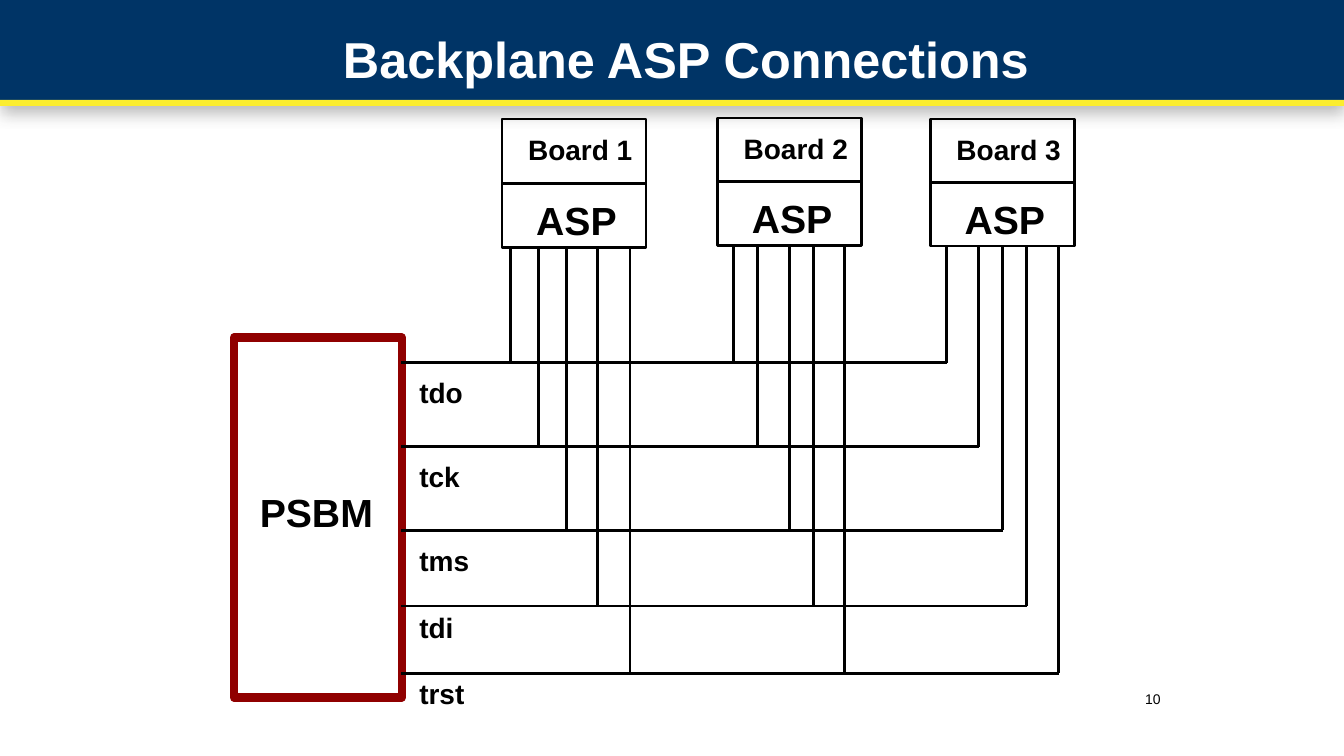
import pptx
import pptx.dml.color
import pptx.enum.shapes
import pptx.enum.text
import pptx.oxml
import pptx.oxml.ns
import pptx.util

Pt = pptx.util.Pt
ALIGN = pptx.enum.text.PP_ALIGN
colour = pptx.dml.color.RGBColor.from_string

presentation = pptx.Presentation()
presentation.slide_width = Pt(960)
presentation.slide_height = Pt(540)
slide = presentation.slides.add_slide(presentation.slide_layouts[5])


def add_box(left, top, width, height, fill=None, line=None, weight=2):
    box = slide.shapes.add_shape(
        pptx.enum.shapes.MSO_SHAPE.RECTANGLE, Pt(left), Pt(top), Pt(width), Pt(height))
    box.shadow.inherit = False
    if fill:
        box.fill.solid()
        box.fill.fore_color.rgb = colour(fill)
    else:
        box.fill.background()
    if line:
        box.line.color.rgb = colour(line)
        box.line.width = Pt(weight)
    else:
        box.line.fill.background()
    return box


def add_text(left, top, width, height, text, size, bold=True, align=ALIGN.LEFT,
             hue="000000", holder=None):
    """Write one run into the given placeholder, or into a new text box."""
    area = holder or slide.shapes.add_textbox(0, 0, 0, 0)
    area.left, area.top, area.width, area.height = Pt(left), Pt(top), Pt(width), Pt(height)
    area.text_frame.word_wrap = True
    paragraph = area.text_frame.paragraphs[0]
    paragraph.alignment = align
    run = paragraph.add_run()
    run.text = text
    run.font.name = "Arial"
    run.font.size = Pt(size)
    run.font.bold = bold
    run.font.color.rgb = colour(hue)


# Header band with its soft shadow, yellow rule and title
band = add_box(0, 0, 960, 72, fill="003466")
band_effects = band.element.spPr.find(pptx.oxml.ns.qn("a:effectLst"))
band_effects.append(pptx.oxml.parse_xml(
    f'<a:outerShdw {pptx.oxml.ns.nsdecls("a")} blurRad="{Pt(12)}" dist="{Pt(8)}" '
    'dir="5400000" algn="t" rotWithShape="0">'
    '<a:srgbClr val="A6A6A6"><a:alpha val="78000"/></a:srgbClr></a:outerShdw>'))
rule = add_box(0, 71.3, 960, 4.3, fill="FBED30")
title = slide.shapes.title
rule.element.addnext(title.element)
title.text_frame.vertical_anchor = pptx.enum.text.MSO_ANCHOR.MIDDLE
add_text(20, 8, 940, 67.7, "Backplane ASP Connections", 36,
         align=ALIGN.CENTER, hue="FFFFFF", holder=title)
add_text(668, 489.6, 168, 37.4, "10", 10, bold=False, align=ALIGN.RIGHT)

# Bus master
add_box(167, 241.2, 120.2, 257, line="900000", weight=6)
add_text(178.5, 345, 97, 41, "PSBM", 28)

# Signal: name, bus height, label top
signals = [
    ("tdo", 259.2, 265),
    ("tck", 319, 324.7),
    ("tms", 378.8, 384.5),
    ("tdi", 432.8, 432.8),
    ("trst", 481, 479.5),
]
# Board: left, top, cell height, tap position for each signal
boards = [
    (358.6, 85, 46, [364.7, 384.5, 404.6, 427, 450]),
    (512.6, 84.3, 45.4, [524, 541, 563.8, 581, 603.4]),
    (664.6, 85, 45.4, [676.2, 699.2, 716.2, 733.5, 756.2]),
]

wires = []
for number, (left, top, cell, taps) in enumerate(boards, start=1):
    for row in range(2):
        add_box(left, top + row * cell, 102.8, cell, line="000000")
    add_text(left + 11.5, top + 5.8, 98, 31.5, f"Board {number}", 20)
    add_text(left + 17.3, top + cell + 5.8, 76, 41, "ASP", 28)
    for tap, (_, bus, _) in zip(taps, signals):
        wires.append((tap, top + 2 * cell, tap, bus))

last_taps = boards[-1][-1]
for (name, bus, label_top), bus_end in zip(signals, last_taps):
    wires.append((286.8, bus, bus_end, bus))
    add_text(292.4, label_top, 54, 31.5, name, 20)

for ends in wires:
    wire = slide.shapes.add_connector(
        pptx.enum.shapes.MSO_CONNECTOR.STRAIGHT, *[Pt(end) for end in ends])
    wire.line.color.rgb = colour("000000")
    wire.line.width = Pt(2)
    wire.element.spPr.append(pptx.oxml.parse_xml(
        f'<a:effectLst {pptx.oxml.ns.nsdecls("a")}/>'))

presentation.save("out.pptx")
